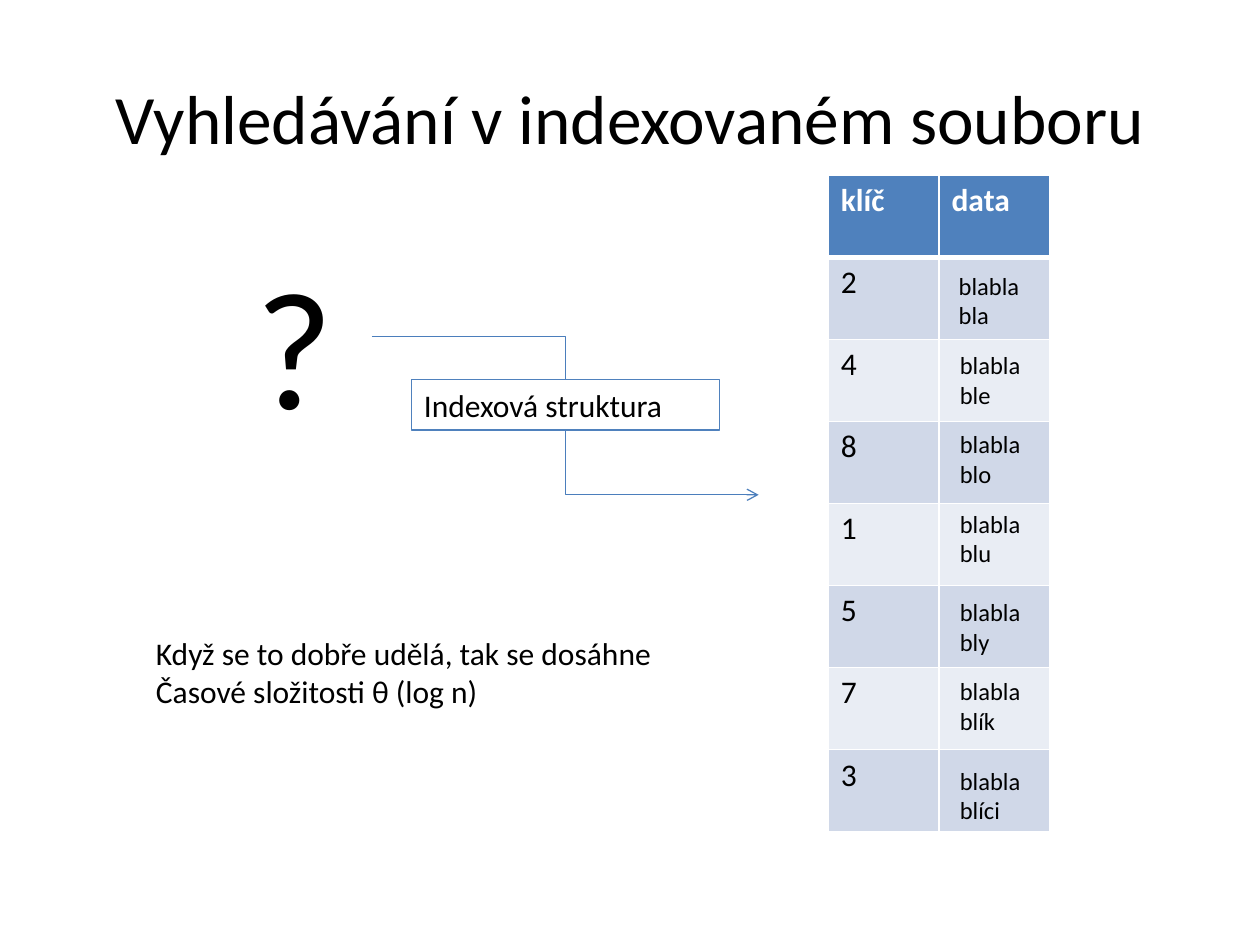
import pptx
import pptx.dml.color
import pptx.enum.shapes
import pptx.enum.text
import pptx.oxml
import pptx.oxml.ns
import pptx.util

Pt = pptx.util.Pt
COLOURS = {
    "text": "000000",
    "white": "FFFFFF",
    "accent": "4F81BD",
    "arrow": "4B7EBC",
    "odd_row": "D0D8E8",
    "even_row": "E9EDF4",
}
RECORDS = [
    # key, data, left and top of the data label
    ("2", "blablabla", 540.7, 151.2),
    ("4", "blablable", 541.4, 196.6),
    ("8", "blablablo", 541.4, 241.9),
    ("1", "blablablu", 541.4, 287.3),
    ("5", "blablably", 541.4, 337.7),
    ("7", "blablablík", 541.4, 383),
    ("3", "blablablíci", 541.4, 434.2),
]


def rgb(name):
    return pptx.dml.color.RGBColor.from_string(COLOURS[name])


class SlideBuilder:
    """Holds the text style and the slide that is being filled."""

    font_name = "Calibri"
    body_size = 18
    line_width = 0.75

    def __init__(self, slide):
        self.slide = slide

    def style(self, paragraph, size, colour="text", bold=False):
        paragraph.font.name = self.font_name
        paragraph.font.size = Pt(size)
        paragraph.font.bold = bold
        paragraph.font.color.rgb = rgb(colour)

    def set_words(self, frame, words, size, centred=False):
        align = pptx.enum.text.PP_ALIGN
        anchor = pptx.enum.text.MSO_ANCHOR
        frame.word_wrap = True
        frame.vertical_anchor = anchor.MIDDLE if centred else anchor.TOP
        paragraph = frame.paragraphs[0]
        paragraph.text = words
        paragraph.alignment = align.CENTER if centred else align.LEFT
        self.style(paragraph, size)

    def text(self, words, left, top, width, height, size=body_size, centred=False):
        box = self.slide.shapes.add_textbox(Pt(left), Pt(top), Pt(width), Pt(height))
        self.set_words(box.text_frame, words, size, centred)

    def labelled_box(self, words, left, top, width, height):
        box = self.slide.shapes.add_shape(
            pptx.enum.shapes.MSO_SHAPE.RECTANGLE,
            Pt(left), Pt(top), Pt(width), Pt(height))
        box.shadow.inherit = False
        box.fill.solid()
        box.fill.fore_color.rgb = rgb("white")
        box.line.color.rgb = rgb("accent")
        box.line.width = Pt(self.line_width)
        self.set_words(box.text_frame, words, self.body_size)

    def elbow_arrow(self, start, end):
        arrow = self.slide.shapes.add_connector(
            pptx.enum.shapes.MSO_CONNECTOR.ELBOW, *map(Pt, start + end))
        arrow.line.color.rgb = rgb("arrow")
        arrow.line.width = Pt(self.line_width)
        namespace = pptx.oxml.ns.nsdecls("a")
        properties = arrow._element.spPr
        properties.find(pptx.oxml.ns.qn("a:ln")).append(
            pptx.oxml.parse_xml(f'<a:tailEnd {namespace} type="arrow"/>'))
        properties.append(pptx.oxml.parse_xml(f"<a:effectLst {namespace}/>"))

    def border(self, cell, side, width):
        cell._tc.get_or_add_tcPr().append(pptx.oxml.parse_xml(
            f'<a:ln{side} {pptx.oxml.ns.nsdecls("a")} w="{int(Pt(width))}"><a:solidFill>'
            f'<a:srgbClr val="{COLOURS["white"]}"/></a:solidFill></a:ln{side}>'))

    def table(self, rows, left, top, column_width, row_height):
        """Draw a header row and banded rows; the header has a thick lower edge."""
        columns = len(rows[0])
        table = self.slide.shapes.add_table(
            len(rows), columns, Pt(left), Pt(top),
            Pt(column_width * columns), Pt(row_height * len(rows))).table
        for column in table.columns:
            column.width = Pt(column_width)
        for r, values in enumerate(rows):
            table.rows[r].height = Pt(row_height)
            header = r == 0
            band = "accent" if header else ("odd_row" if r % 2 else "even_row")
            for c, value in enumerate(values):
                cell = table.cell(r, c)
                for side in "LRTB":
                    thick = (r, side) in ((0, "B"), (1, "T"))
                    self.border(cell, side, 3 if thick else 1)
                cell.fill.solid()
                cell.fill.fore_color.rgb = rgb(band)
                cell.text = value
                self.style(cell.text_frame.paragraphs[0], self.body_size,
                           "white" if header else "text", header)


def main():
    deck = pptx.Presentation()
    deck.slide_width, deck.slide_height = Pt(720), Pt(540)
    page = SlideBuilder(deck.slides.add_slide(deck.slide_layouts[6]))

    page.text("Vyhledávání v indexovaném souboru", 36, 21.6, 648, 90,
              size=39.6, centred=True)
    page.table([("klíč", "data")] + [(key, "") for key, *_ in RECORDS],
               473.3, 100.2, 63.3, 46.9)
    for _, data, left, top in RECORDS:
        page.text(data, left, top, 51.1, 41, size=14)
    page.elbow_arrow((212.6, 192.2), (433.6, 282.8))
    page.text("?", 139, 134.6, 108, 123.8, size=96)
    page.text("Když se to dobře udělá, tak se dosáhne\vČasové složitosti θ (log n)",
              82, 358.6, 351.4, 51)
    page.labelled_box("Indexová struktura", 235.2, 216.8, 175.9, 29)

    deck.save("out.pptx")


if __name__ == "__main__":
    main()
